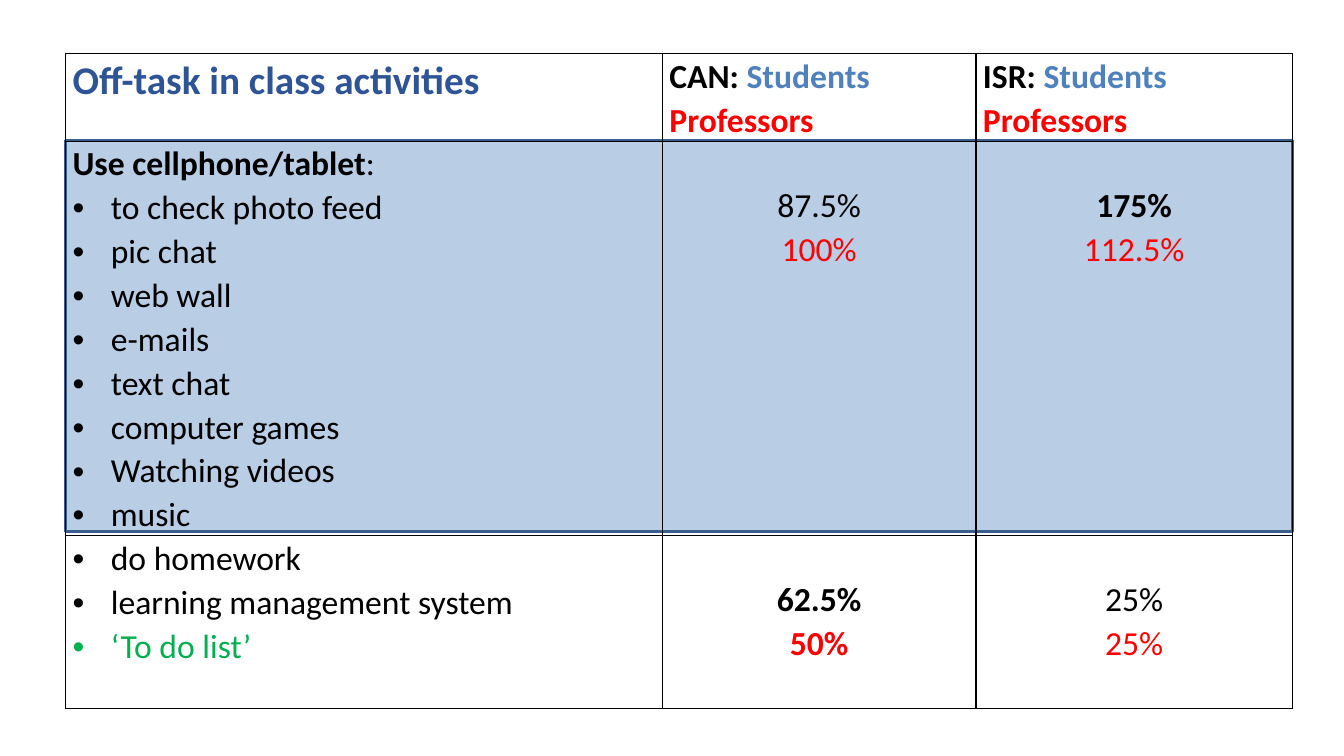
"""Builds a slide comparing off-task class activities in two countries."""
from pptx import Presentation
from pptx.dml.color import RGBColor
from pptx.enum.shapes import MSO_SHAPE as Preset
from pptx.enum.text import PP_ALIGN as Align
from pptx.oxml import parse_xml
from pptx.oxml.ns import nsdecls
from pptx.util import Inches, Pt

BLACK, RED, BLUE, NAVY, GREEN = "000000", "FF0000", "4F81BD", "2F5496", "00B050"
LEFT, WIDTH = 0.65, 12.17


def colour(hex_text):
    return RGBColor.from_string(hex_text)


def run(text, tint=BLACK, bold=False, size=24):
    return text, tint, bold, size


class ActivitySlide:
    """Holds the text style and the current slide."""

    font_name = "Calibri"
    line_spacing = 1.07
    insets = {"margin_left": 0.07, "margin_right": 0.07, "margin_top": 0, "margin_bottom": 0}

    def __init__(self, deck):
        self.slide = deck.slides.add_slide(deck.slide_layouts[6])

    def band(self, left, top, width, height, fill, line):
        band = self.slide.shapes.add_shape(
            Preset.RECTANGLE, Inches(left), Inches(top), Inches(width), Inches(height))
        band.shadow.inherit = False
        band.fill.solid()
        band.fill.fore_color.rgb = colour(fill)
        band.line.color.rgb = colour(line)
        band.line.width = Pt(2)

    def table(self, left, top, widths, heights):
        grid = self.slide.shapes.add_table(
            len(heights), len(widths), Inches(left), Inches(top),
            Inches(sum(widths)), Inches(sum(heights))).table
        grid.first_row = grid.horz_banding = False
        for column, width in zip(grid.columns, widths):
            column.width = Inches(width)
        for row, height in zip(grid.rows, heights):
            row.height = Inches(height)
        return grid

    def cell(self, cell, paragraphs, align=Align.LEFT, top=0):
        for side, inset in {**self.insets, "margin_top": top}.items():
            setattr(cell, side, Inches(inset))
        self.borders(cell)
        cell.fill.background()
        frame = cell.text_frame
        for index, (bulleted, runs) in enumerate(paragraphs):
            paragraph = frame.add_paragraph() if index else frame.paragraphs[0]
            paragraph.alignment = align
            paragraph.line_spacing = self.line_spacing
            if bulleted:
                self.bullet(paragraph)
            for text, tint, bold, size in runs:
                piece = paragraph.add_run()
                piece.text = text
                style = {"name": self.font_name, "size": Pt(size), "bold": bold}
                for name, value in style.items():
                    setattr(piece.font, name, value)
                piece.font.color.rgb = colour(tint)

    def borders(self, cell):
        properties = cell._tc.get_or_add_tcPr()
        for side in "LRTB":
            properties.append(parse_xml(
                f'<a:ln{side} {nsdecls("a")} w="{Pt(1)}"><a:solidFill>'
                f'<a:srgbClr val="{BLACK}"/></a:solidFill></a:ln{side}>'))

    def bullet(self, paragraph):
        properties = paragraph._p.get_or_add_pPr()
        properties.set("marL", str(Inches(0.38)))
        properties.set("indent", str(-Inches(0.38)))
        properties.append(parse_xml(f'<a:buFont {nsdecls("a")} typeface="Arial"/>'))
        properties.append(parse_xml(f'<a:buChar {nsdecls("a")} char="•"/>'))


def plain(*runs):
    return False, runs


def bullets(*texts, tint=BLACK):
    return [(True, [run(text, tint)]) for text in texts]


def main():
    deck = Presentation()
    deck.slide_width, deck.slide_height = Inches(13.33), Inches(7.5)
    page = ActivitySlide(deck)
    page.band(LEFT, 1.39, WIDTH, 3.88, "B9CDE5", "3A5F8C")
    grid = page.table(LEFT, 0.53, [5.92, 3.11, 3.14], [0.86, 3.85, 1.71])

    activities = [
        [plain(run("Off-task in class activities", NAVY, True, 28))],
        [plain(run("Use cellphone/tablet", bold=True), run(":")),
         *bullets("to check photo feed", "pic chat", "web wall", "e-mails", "text chat",
                  "computer games", "Watching videos", "music")],
        bullets("do homework", "learning management system")
        + bullets("‘To do list’", tint=GREEN),
    ]
    for row, activity in enumerate(activities):
        page.cell(grid.cell(row, 0), activity)

    countries = [
        ("CAN: ", Align.LEFT, [("87.5%", False, "100%", False), ("62.5%", True, "50%", True)]),
        ("ISR: ", Align.JUSTIFY, [("175%", True, "112.5%", False), ("25%", False, "25%", False)]),
    ]
    for column, (country, align, shares) in enumerate(countries, 1):
        page.cell(grid.cell(0, column), [
            plain(run(country, bold=True), run("Students", BLUE, True)),
            plain(run("Professors", RED, True))], align)
        for row, (students, students_bold, professors, professors_bold) in enumerate(shares, 1):
            page.cell(grid.cell(row, column), [
                plain(run(students, bold=students_bold)),
                plain(run(professors, RED, professors_bold))], Align.CENTER, top=0.41)

    deck.save("out.pptx")


if __name__ == "__main__":
    main()
